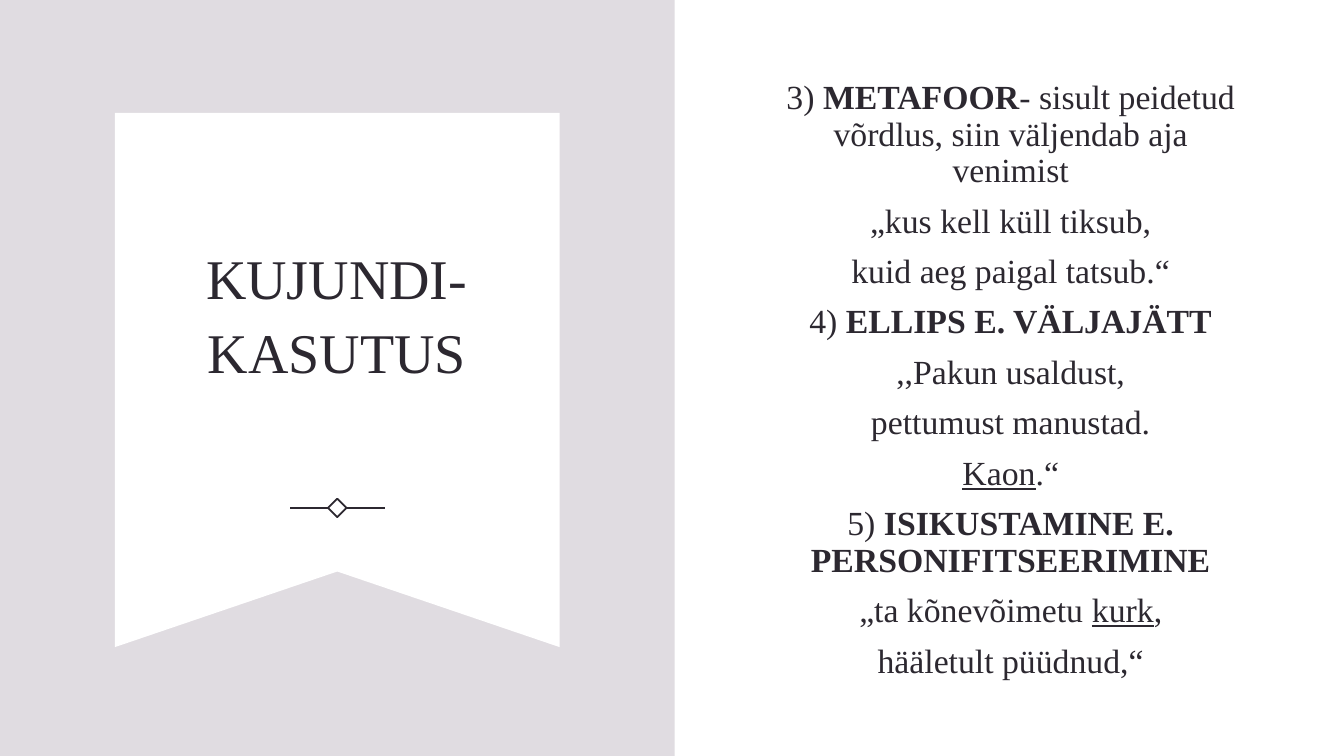
import pptx
import pptx.util
import pptx.dml.color
import pptx.enum.shapes
import pptx.enum.text
import pptx.oxml

INK = pptx.dml.color.RGBColor(0x2C, 0x28, 0x30)
LILAC = pptx.dml.color.RGBColor(0xE0, 0xDC, 0xE1)
WHITE = pptx.dml.color.RGBColor(0xFF, 0xFF, 0xFF)
FONT = "Times New Roman"
SHAPE = pptx.enum.shapes.MSO_SHAPE
Inches, Pt = pptx.util.Inches, pptx.util.Pt

prs = pptx.Presentation()
prs.slide_width, prs.slide_height = Inches(13.33), Inches(7.5)
s = prs.slides.add_slide(prs.slide_layouts[6])


def add_text(box, paragraphs, size, para_format):
    """Fill a centred text box; each paragraph is a list of (text, font format)."""
    tf = s.shapes.add_textbox(*map(Inches, box)).text_frame
    tf.word_wrap = True
    tf.vertical_anchor = pptx.enum.text.MSO_ANCHOR.MIDDLE
    for i, runs in enumerate(paragraphs):
        p = tf.add_paragraph() if i else tf.paragraphs[0]
        p.alignment = pptx.enum.text.PP_ALIGN.CENTER
        for name, value in para_format.items():
            setattr(p, name, value)
        for text, font_format in runs:
            r = p.add_run()
            r.text = text
            r.font.color.rgb = INK
            for name, value in {"name": FONT, "size": Pt(size), **font_format}.items():
                setattr(r.font, name, value)


# Left panel, half the slide wide
panel = s.shapes.add_shape(SHAPE.RECTANGLE, 0, 0, Inches(6.69), prs.slide_height)

# Banner with a notched lower edge
left, top, right, bottom, notch = 1.14, 1.12, 5.55, 6.42, 5.67
middle = (left + right) / 2
builder = s.shapes.build_freeform(Inches(left), Inches(top))
builder.add_line_segments([(Inches(x), Inches(y)) for x, y in (
    (right, top), (right, bottom), (middle, notch), (left, bottom))])
banner = builder.convert_to_shape()

for sp, color in ((panel, LILAC), (banner, WHITE)):
    sp.shadow.inherit = False
    sp.fill.solid()
    sp.fill.fore_color.rgb = color
    sp.line.fill.background()

# Ornament: a diamond between two short lines
rule_y, side, inner, outer = 5.04, 0.13, 0.08, 0.47
diamond = s.shapes.add_shape(SHAPE.RECTANGLE, Inches(middle - side / 2),
                             Inches(rule_y - side / 2), Inches(side), Inches(side))
diamond.rotation = 45
diamond.shadow.inherit = False
diamond.fill.background()
ornament = [diamond]
for sign in (-1, 1):
    rule = s.shapes.add_connector(
        pptx.enum.shapes.MSO_CONNECTOR.STRAIGHT,
        Inches(middle + sign * inner), Inches(rule_y),
        Inches(middle + sign * outer), Inches(rule_y))
    ornament.append(rule)
for sp in ornament:
    sp.line.color.rgb = INK
    sp.line.width = Pt(1.25)
for rule in ornament[1:]:
    rule._element.spPr.append(pptx.oxml.parse_xml(
        '<a:effectLst xmlns:a="http://schemas.openxmlformats.org/drawingml/2006/main"/>'))

add_text((1.5, 1.51, 3.68, 3.14), [[("KUJUNDI-KASUTUS", {})]], 40,
         {"line_spacing": 1.1})

PLAIN, BOLD, UNDERLINE = {}, {"bold": True}, {"underline": True}
figures_of_speech = [
    [("3) ", PLAIN), ("METAFOOR", BOLD),
     ("- sisult peidetud võrdlus, siin väljendab aja venimist", PLAIN)],
    [("„kus kell küll tiksub,", PLAIN)],
    [("kuid aeg paigal tatsub.“", PLAIN)],
    [("4) ", PLAIN), ("ELLIPS E. VÄLJAJÄTT", BOLD)],
    [(",,Pakun usaldust,", PLAIN)],
    [("pettumust manustad.", PLAIN)],
    [("Kaon", UNDERLINE), (".“", PLAIN)],
    [("5) ", PLAIN), ("ISIKUSTAMINE E. PERSONIFITSEERIMINE", BOLD)],
    [("„ta kõnevõimetu ", PLAIN), ("kurk", UNDERLINE), (",", PLAIN)],
    [("hääletult püüdnud,“", PLAIN)],
]
add_text((7.67, 0.68, 4.71, 6.19), figures_of_speech, 24.1,
         {"line_spacing": 0.9, "space_before": Pt(10)})

prs.save("out.pptx")
